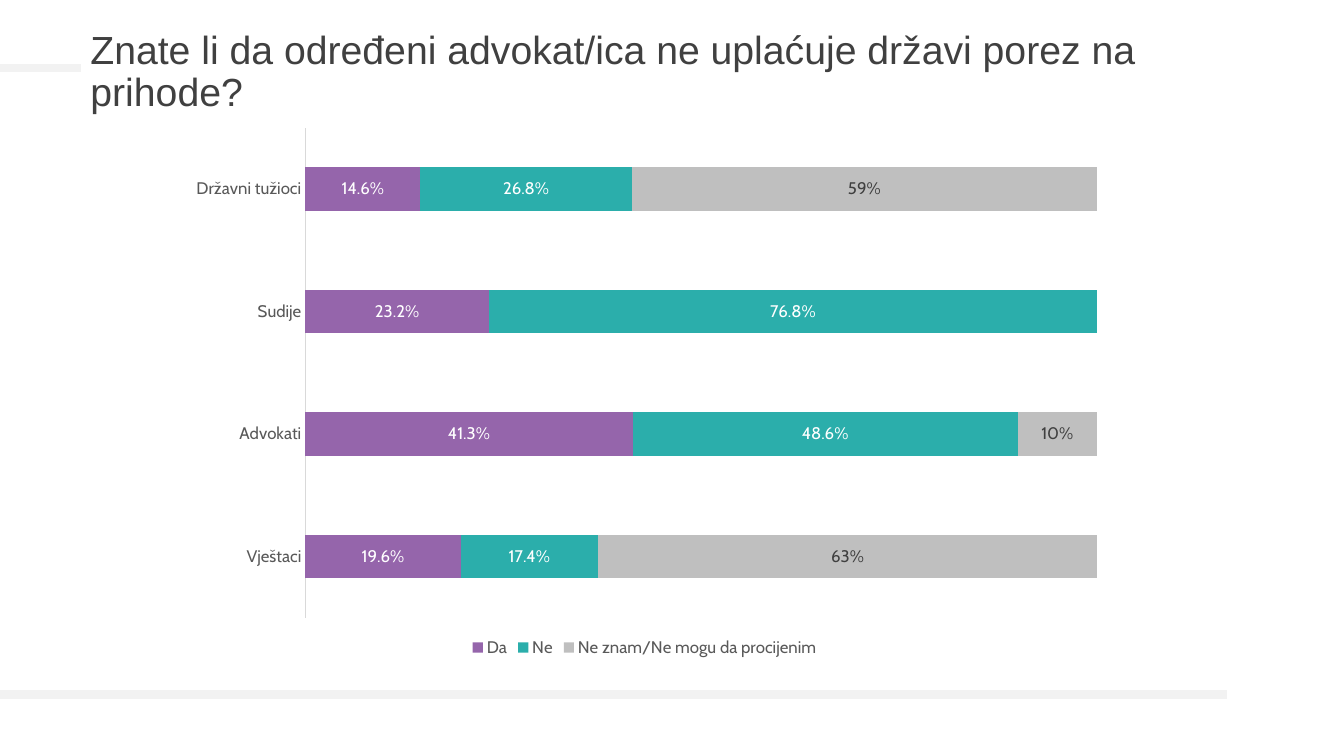
import pptx
import pptx.chart.data
import pptx.dml.color
import pptx.enum.chart
import pptx.enum.shapes
import pptx.enum.text
import pptx.oxml
import pptx.oxml.ns
import pptx.util

Cm, Pt = pptx.util.Cm, pptx.util.Pt
RGBColor = pptx.dml.color.RGBColor
xl = pptx.enum.chart

WHITE = RGBColor(0xFF, 0xFF, 0xFF)
RULE_GREY = RGBColor(0xF2, 0xF2, 0xF2)
AXIS_GREY = RGBColor(0xD9, 0xD9, 0xD9)
TEXT_GREY = RGBColor(0x59, 0x59, 0x59)
DARK_GREY = RGBColor(0x40, 0x40, 0x40)
PURPLE = RGBColor(0x95, 0x65, 0xAB)
TEAL = RGBColor(0x2B, 0xAE, 0xAB)
SILVER = RGBColor(0xBF, 0xBF, 0xBF)

TITLE = "Znate li da određeni advokat/ica ne uplaćuje državi porez na prihode?"
GROUPS = ["Državni tužioci", "Sudije", "Advokati", "Vještaci"]
# name, values, fill, label colour, label format (the last one hides zeros)
ANSWERS = [
    ("Da", [0.146, 0.232, 0.413, 0.196], PURPLE, WHITE, "0.0%"),
    ("Ne", [0.268, 0.768, 0.486, 0.174], TEAL, WHITE, "0.0%"),
    ("Ne znam/Ne mogu da procijenim", [0.59, 0, 0.1, 0.63], SILVER, DARK_GREY, "0%;;"),
]
PLOT_BOX = {"x": 0.14, "y": 0.02, "w": 0.84, "h": 0.9}


def set_font(font, size=12, color=TEXT_GREY, name="Cabin"):
    font.size = Pt(size)
    font.name = name
    font.color.rgb = color


def add_text(tf, text, **fmt):
    """Write text into the first paragraph and return that paragraph."""
    p = tf.paragraphs[0]
    r = p.add_run()
    r.text = text
    set_font(r.font, **fmt)
    return p


def set_plot_box(chart, box):
    """Fix the inner plot area, as fractions of the chart frame."""
    plot_area = chart.plots[0]._element.getparent()
    for old in plot_area.findall(pptx.oxml.ns.qn("c:layout")):
        plot_area.remove(old)
    sizes = "".join(f'<c:{key} val="{value}"/>' for key, value in box.items())
    plot_area.insert(0, pptx.oxml.parse_xml(
        f'<c:layout {pptx.oxml.ns.nsdecls("c")}><c:manualLayout>'
        '<c:layoutTarget val="inner"/><c:xMode val="edge"/><c:yMode val="edge"/>'
        f'{sizes}</c:manualLayout></c:layout>'))


class SurveySlide:
    """Holds the slide and the style of its elements."""

    rule_width = Pt(6)

    def __init__(self, prs):
        self.s = prs.slides.add_slide(prs.slide_layouts[6])

    def rule(self, y, end):
        """Draw a horizontal rule from the left slide edge."""
        sp = self.s.shapes.add_connector(
            pptx.enum.shapes.MSO_CONNECTOR.STRAIGHT, 0, Cm(y), Cm(end), Cm(y))
        sp.line.color.rgb = RULE_GREY
        sp.line.width = self.rule_width
        sp._element.spPr.append(pptx.oxml.parse_xml(
            f'<a:effectLst {pptx.oxml.ns.nsdecls("a")}/>'))

    def title(self, text, x, y, w, h):
        tf = self.s.shapes.add_textbox(Cm(x), Cm(y), Cm(w), Cm(h)).text_frame
        tf.word_wrap = True
        tf.vertical_anchor = pptx.enum.text.MSO_ANCHOR.MIDDLE
        p = add_text(tf, text, size=28, color=DARK_GREY, name="Arial")
        p.line_spacing = 0.9

    def stacked_bars(self, x, y, w, h):
        data = pptx.chart.data.CategoryChartData(number_format="0.0%")
        data.categories = GROUPS
        for name, values, *_ in ANSWERS:
            data.add_series(name, values)
        chart = self.s.shapes.add_chart(
            xl.XL_CHART_TYPE.BAR_STACKED_100, Cm(x), Cm(y), Cm(w), Cm(h), data).chart
        set_font(chart.font)
        chart.has_title = False
        chart.has_legend = True
        chart.legend.position = xl.XL_LEGEND_POSITION.BOTTOM
        chart.legend.include_in_layout = False
        set_font(chart.legend.font)

        axis = chart.category_axis
        axis.reverse_order = True
        axis.major_tick_mark = axis.minor_tick_mark = xl.XL_TICK_MARK.NONE
        axis.format.line.color.rgb = AXIS_GREY
        axis.format.line.width = Pt(0.75)
        set_font(axis.tick_labels.font)
        chart.value_axis.has_major_gridlines = False
        chart.value_axis.visible = False

        plot = chart.plots[0]
        plot.gap_width = 182
        plot.overlap = 100
        plot.vary_by_categories = False
        for series, (_, _, fill, label_color, fmt) in zip(plot.series, ANSWERS):
            series.format.fill.solid()
            series.format.fill.fore_color.rgb = fill
            labels = series.data_labels
            labels.show_value = True
            labels.position = xl.XL_LABEL_POSITION.CENTER
            labels.number_format = fmt
            labels.number_format_is_linked = False
            set_font(labels.font, color=label_color)
        set_plot_box(chart, PLOT_BOX)


def main():
    prs = pptx.Presentation()
    prs.slide_width, prs.slide_height = Cm(33.87), Cm(19.05)
    slide = SurveySlide(prs)
    slide.rule(y=1.71, end=2.03)
    slide.title(TITLE, x=2.03, y=0.71, w=30.02, h=2.24)
    slide.rule(y=17.5, end=30.91)
    slide.stacked_bars(x=4.37, y=2.95, w=23.75, h=13.72)
    prs.save("out.pptx")


if __name__ == "__main__":
    main()
